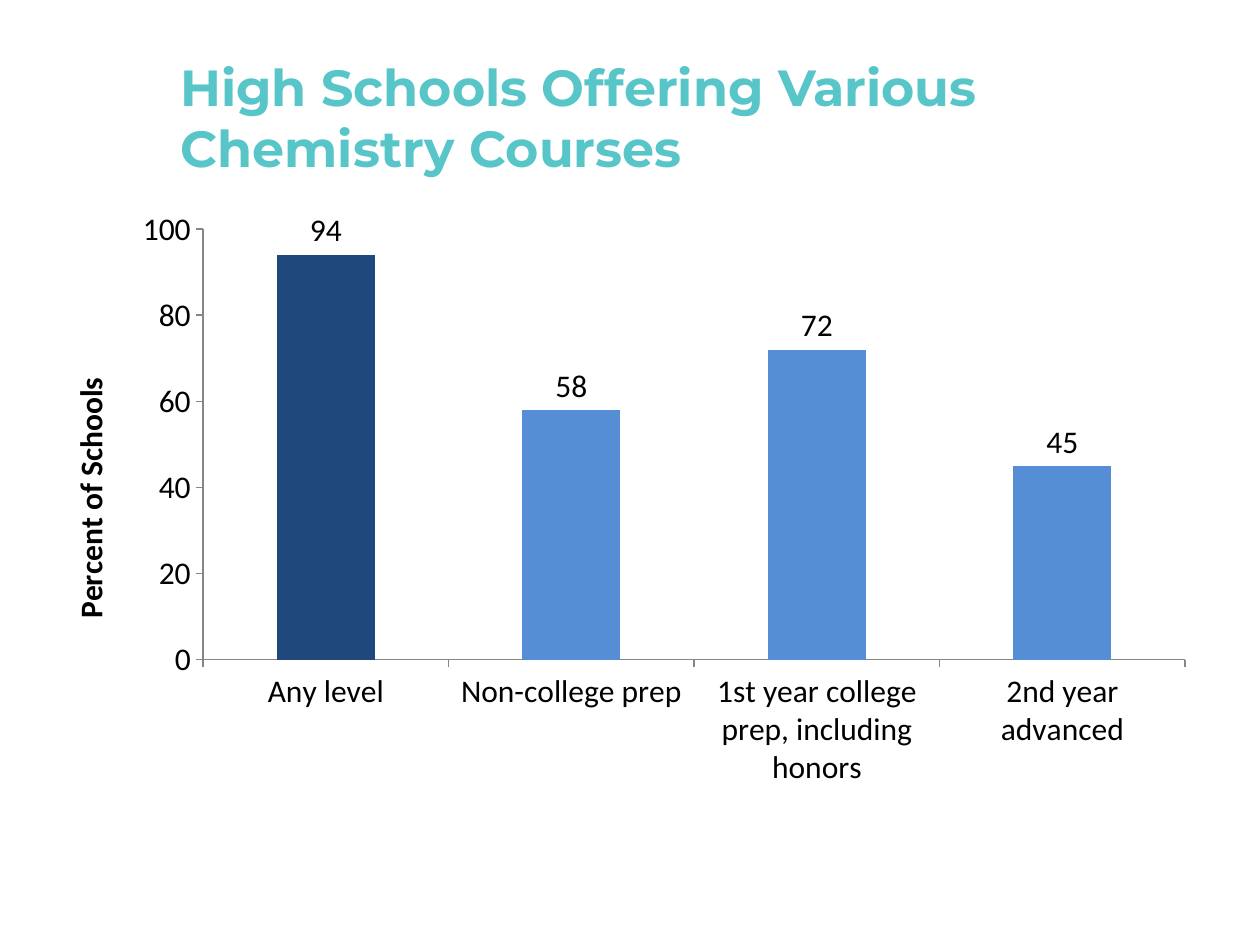
from lxml import etree
from pptx import Presentation
from pptx.chart.data import CategoryChartData
from pptx.dml.color import RGBColor
from pptx.enum.chart import XL_CHART_TYPE, XL_LABEL_POSITION, XL_TICK_MARK
from pptx.enum.text import MSO_ANCHOR, PP_ALIGN
from pptx.oxml.ns import qn
from pptx.util import Inches, Pt

COLUMN = XL_CHART_TYPE.COLUMN_CLUSTERED
OUT_END = XL_LABEL_POSITION.OUTSIDE_END
TICK_OUT, NO_TICK = XL_TICK_MARK.OUTSIDE, XL_TICK_MARK.NONE
MIDDLE, LEFT = MSO_ANCHOR.MIDDLE, PP_ALIGN.LEFT

WHITE = RGBColor(0xFF, 0xFF, 0xFF)
BLACK = RGBColor(0x00, 0x00, 0x00)
TEAL = RGBColor(0x58, 0xC5, 0xC9)
BLUE = RGBColor(0x55, 0x8E, 0xD5)
NAVY = RGBColor(0x1F, 0x49, 0x7D)
GRAY = RGBColor(0x86, 0x86, 0x86)


class Deck:
    """Holds the style and the current slide."""

    head_font, body_font = "Montserrat", "Calibri"
    head_size, body_size = Pt(29), Pt(18)

    def __init__(self, prs):
        self.slide = prs.slides.add_slide(prs.slide_layouts[5])
        fill = self.slide.background.fill
        fill.solid()
        fill.fore_color.rgb = WHITE

    def style(self, font, name, size, color, bold=False):
        font.name, font.size, font.bold = name, size, bold
        font.color.rgb = color

    def title(self, text, box):
        shape = self.slide.shapes.title
        shape.left, shape.top, shape.width, shape.height = map(Inches, box)
        frame = shape.text_frame
        frame.text = text
        frame.word_wrap = True
        frame.vertical_anchor = MIDDLE
        par = frame.paragraphs[0]
        par.alignment = LEFT
        self.style(par.font, self.head_font, self.head_size, TEAL, True)

    def axis(self, axis):
        axis.has_major_gridlines = False
        axis.major_tick_mark = TICK_OUT
        axis.minor_tick_mark = NO_TICK
        axis.format.line.color.rgb = GRAY
        axis.format.line.width = Pt(0.75)

    def place(self, chart, spots):
        """Fix the inner plot area as fractions of the chart."""
        plot = chart.plots[0]._element.getparent()
        layout = plot.find(qn("c:layout"))
        if layout is None:
            layout = etree.Element(qn("c:layout"))
            plot.insert(0, layout)
        manual = etree.SubElement(layout, qn("c:manualLayout"))
        modes = {"layoutTarget": "inner", "xMode": "edge", "yMode": "edge"}
        for tag, val in {**modes, **spots}.items():
            etree.SubElement(manual, qn("c:" + tag)).set("val", str(val))

    def columns(self, cats, vals, y_title, box):
        data = CategoryChartData()
        data.categories = cats
        data.add_series("Series 1", vals)
        frame = self.slide.shapes.add_chart(COLUMN, *map(Inches, box), data)
        chart = frame.chart
        chart.has_legend = chart.has_title = False
        self.style(chart.font, self.body_font, self.body_size, BLACK)

        # Axes
        self.axis(chart.category_axis)
        y_axis = chart.value_axis
        self.axis(y_axis)
        y_axis.minimum_scale, y_axis.maximum_scale = 0, 100
        y_axis.major_unit = 20
        text = y_axis.axis_title.text_frame
        text.text = y_title
        self.style(text.paragraphs[0].font, self.body_font, self.body_size,
                   BLACK, True)

        # Columns, the first one darker, with their values on top
        plot = chart.plots[0]
        plot.gap_width = 150
        plot.vary_by_categories = False
        series = plot.series[0]
        for part, color in ((series, BLUE), (series.points[0], NAVY)):
            part.format.fill.solid()
            part.format.fill.fore_color.rgb = color
        labels = series.data_labels
        labels.show_value = True
        labels.position = OUT_END
        self.style(labels.font, self.body_font, self.body_size, BLACK)
        self.place(chart, {"x": 0.13, "y": 0.05, "w": 0.85, "h": 0.72})


def main():
    prs = Presentation()
    prs.slide_width, prs.slide_height = Inches(10), Inches(7.5)
    deck = Deck(prs)
    deck.columns(
        ["Any level", "Non-college prep",
         "1st year college prep, including honors", "2nd year advanced"],
        [94, 58, 72, 45], "Percent of Schools", (0.42, 1.58, 9.17, 4.75))
    deck.title("High Schools Offering Various Chemistry Courses",
               (1.33, 0.3, 8.17, 1.25))
    prs.save("out.pptx")


if __name__ == "__main__":
    main()
